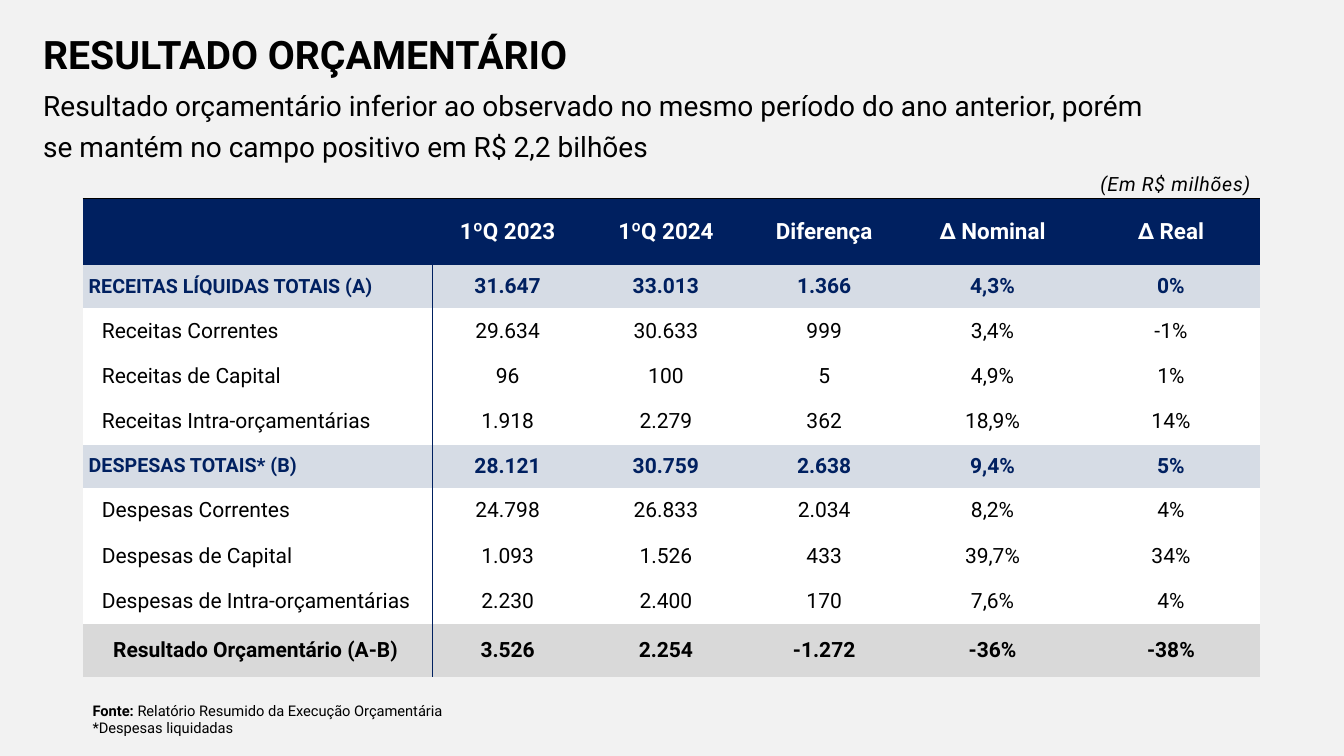
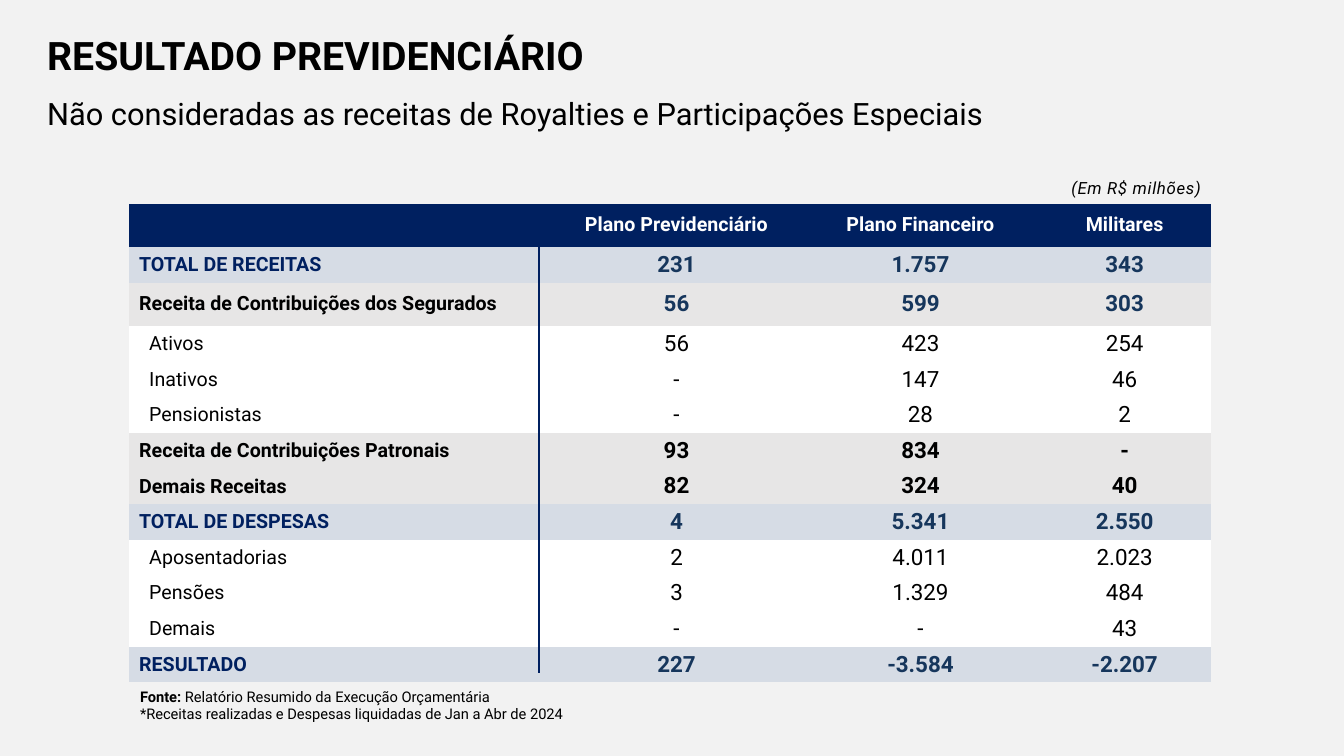
from dataclasses import dataclass, replace

from pptx import Presentation
from pptx.dml.color import RGBColor
from pptx.enum.shapes import MSO_CONNECTOR
from pptx.enum.text import MSO_ANCHOR, PP_ALIGN
from pptx.oxml import parse_xml
from pptx.oxml.ns import nsdecls, qn
from pptx.util import Inches, Pt


@dataclass(frozen=True)
class Theme:
    font: str = "Roboto"
    background: str = "F2F2F2"
    ink: str = "000000"
    navy: str = "002060"
    steel: str = "16365C"
    white: str = "FFFFFF"
    pale_blue: str = "D6DCE5"
    pale_gray: str = "E7E6E6"
    gray: str = "D9D9D9"
    title: float = 28
    source: float = 10.5
    plain_style: str = "{2D5ABB26-0587-4C30-8999-92F81FD0307C}"


@dataclass(frozen=True)
class Box:
    left: float
    top: float
    width: float
    height: float

    def inches(self):
        return [Inches(n) for n in (self.left, self.top, self.width, self.height)]


@dataclass(frozen=True)
class RowStyle:
    fill: str
    label_size: float
    value_size: float
    height: float
    label_color: str
    value_color: str
    bold: bool = True
    indent: float = 0.1
    label_align: PP_ALIGN = PP_ALIGN.LEFT


THEME = Theme()


def add_run(paragraph, text, size, color=THEME.ink, bold=False, italic=False, spacing=0):
    run = paragraph.add_run()
    run.text = text
    run.font.name = THEME.font
    run.font.size = Pt(size)
    run.font.bold = bold
    run.font.italic = italic
    run.font.color.rgb = RGBColor.from_string(color)
    if spacing:
        run.font._element.set("spc", str(int(spacing * 100)))


def add_text_frame(slide, box, anchor=MSO_ANCHOR.TOP):
    frame = slide.shapes.add_textbox(*box.inches()).text_frame
    frame.word_wrap = True
    frame.vertical_anchor = anchor
    return frame


def add_title(slide, box, title):
    paragraph = add_text_frame(slide, box, MSO_ANCHOR.MIDDLE).paragraphs[0]
    paragraph.line_spacing = 0.9
    add_run(paragraph, title, THEME.title, bold=True)


def add_subtitle(slide, box, subtitle, size, right_inset=0.1):
    frame = add_text_frame(slide, box, MSO_ANCHOR.MIDDLE)
    frame.margin_right = Inches(right_inset)
    paragraph = frame.paragraphs[0]
    paragraph.line_spacing = 1.2
    add_run(paragraph, subtitle, size)


def add_unit(slide, box, size):
    paragraph = add_text_frame(slide, box).paragraphs[0]
    paragraph.alignment = PP_ALIGN.RIGHT
    paragraph.line_spacing = 1.2
    add_run(paragraph, "(Em R$ milhões)", size, italic=True, spacing=0.5)


def add_source(slide, box, remark):
    frame = add_text_frame(slide, box)
    source = frame.paragraphs[0]
    add_run(source, "Fonte: ", THEME.source, bold=True)
    add_run(source, "Relatório Resumido da Execução Orçamentária", THEME.source)
    add_run(frame.add_paragraph(), remark, THEME.source)


def add_divider(slide, x, top, bottom, width):
    divider = slide.shapes.add_connector(
        MSO_CONNECTOR.STRAIGHT, Inches(x), Inches(top), Inches(x), Inches(bottom)
    )
    divider.line.color.rgb = RGBColor.from_string(THEME.navy)
    divider.line.width = Pt(width)
    divider._element.spPr.append(parse_xml(f"<a:effectLst {nsdecls('a')}/>"))


def add_top_border(cell, color, width):
    border = parse_xml(
        f'<a:lnT {nsdecls("a")} w="{Pt(width)}"><a:solidFill>'
        f'<a:srgbClr val="{color}"/></a:solidFill></a:lnT>'
    )
    cell._tc.get_or_add_tcPr().insert(0, border)


def fill_cell(cell, text, style, is_label):
    cell.fill.solid()
    cell.fill.fore_color.rgb = RGBColor.from_string(style.fill)
    cell.vertical_anchor = MSO_ANCHOR.MIDDLE
    cell.margin_left = Inches(style.indent if is_label else 0)
    cell.margin_right = cell.margin_top = cell.margin_bottom = 0
    if text:
        paragraph = cell.text_frame.paragraphs[0]
        paragraph.alignment = style.label_align if is_label else PP_ALIGN.CENTER
        size = style.label_size if is_label else style.value_size
        color = style.label_color if is_label else style.value_color
        add_run(paragraph, text, size, color, style.bold)


def add_results(slide, box, columns, rows, styles, header_border=0):
    table = slide.shapes.add_table(len(rows), len(columns), *box.inches()).table
    table._tbl.tblPr.find(qn("a:tableStyleId")).text = THEME.plain_style
    table.horz_banding = False
    for column, width in zip(table.columns, columns):
        column.width = Inches(width)
    for row, (kind, *texts) in zip(table.rows, rows):
        style = styles[kind]
        row.height = Inches(style.height)
        for index, (cell, text) in enumerate(zip(row.cells, texts)):
            fill_cell(cell, text, style, index == 0)
            if kind == "header" and header_border:
                add_top_border(cell, THEME.ink, header_border)


def add_slide(deck):
    slide = deck.slides.add_slide(deck.slide_layouts[6])
    slide.background.fill.solid()
    slide.background.fill.fore_color.rgb = RGBColor.from_string(THEME.background)
    return slide


def build_budget(deck):
    slide = add_slide(deck)
    table = Box(0.82, 1.97, 11.68, 4.75)
    header = RowStyle(THEME.navy, 16, 16, 0.66, THEME.white, THEME.white)
    detail = RowStyle(THEME.white, 15, 15, 0.45, THEME.ink, THEME.ink, False, 0.19)
    styles = {
        "header": header,
        "total": RowStyle(THEME.pale_blue, 14, 15, 0.43, THEME.navy, THEME.navy, indent=0.06),
        "detail": detail,
        "result": replace(detail, fill=THEME.gray, height=0.53, bold=True,
                          indent=0, label_align=PP_ALIGN.CENTER),
    }
    rows = [
        ("header", "", "1ºQ 2023", "1ºQ 2024", "Diferença", "∆ Nominal", "∆ Real"),
        ("total", "RECEITAS LÍQUIDAS TOTAIS (A)", "31.647", "33.013", "1.366", "4,3%", "0%"),
        ("detail", "Receitas Correntes", "29.634", "30.633", "999", "3,4%", "-1%"),
        ("detail", "Receitas de Capital", "96", "100", "5", "4,9%", "1%"),
        ("detail", "Receitas Intra-orçamentárias", "1.918", "2.279", "362", "18,9%", "14%"),
        ("total", "DESPESAS TOTAIS* (B)", "28.121", "30.759", "2.638", "9,4%", "5%"),
        ("detail", "Despesas Correntes", "24.798", "26.833", "2.034", "8,2%", "4%"),
        ("detail", "Despesas de Capital", "1.093", "1.526", "433", "39,7%", "34%"),
        ("detail", "Despesas de Intra-orçamentárias", "2.230", "2.400", "170", "7,6%", "4%"),
        ("result", "Resultado Orçamentário (A-B)", "3.526", "2.254", "-1.272", "-36%", "-38%"),
    ]
    add_title(slide, Box(0.33, 0.17, 10.55, 0.79), "RESULTADO ORÇAMENTÁRIO")
    add_subtitle(
        slide, Box(0.33, 0.82, 11.68, 0.79),
        "Resultado orçamentário inferior ao observado no mesmo período do ano anterior, "
        "porém se mantém no campo positivo em R$ 2,2 bilhões",
        20, right_inset=0.5,
    )
    add_unit(slide, Box(table.left + table.width - 2.09, 1.61, 2.09, 0.42), 14)
    add_source(slide, Box(table.left, 6.91, 4.74, 0.45), "*Despesas liquidadas")
    add_results(slide, table, [3.43] + [1.57] * 3 + [1.77] * 2, rows, styles, 0.5)
    add_divider(slide, 4.29, 2.41, table.top + table.height, 0.75)


def build_pension(deck):
    slide = add_slide(deck)
    table = Box(1.28, 2.02, 10.73, 4.75)
    tall = 0.43
    short = (table.height - 2 * tall) / 11
    total = RowStyle(THEME.pale_blue, 14, 16, short, THEME.navy, THEME.steel)
    group = replace(total, fill=THEME.pale_gray, label_color=THEME.ink, value_color=THEME.ink)
    styles = {
        "header": RowStyle(THEME.navy, 14, 14, tall, THEME.white, THEME.white),
        "total": total,
        "main group": replace(group, height=tall, value_color=THEME.steel),
        "group": group,
        "detail": replace(group, fill=THEME.white, bold=False, indent=0.2),
    }
    rows = [
        ("header", "", "Plano Previdenciário", "Plano Financeiro", "Militares"),
        ("total", "TOTAL DE RECEITAS", "231", "1.757", "343"),
        ("main group", "Receita de Contribuições dos Segurados", "56", "599", "303"),
        ("detail", "Ativos", "56", "423", "254"),
        ("detail", "Inativos", "-", "147", "46"),
        ("detail", "Pensionistas", "-", "28", "2"),
        ("group", "Receita de Contribuições Patronais", "93", "834", "-"),
        ("group", "Demais Receitas", "82", "324", "40"),
        ("total", "TOTAL DE DESPESAS", "4", "5.341", "2.550"),
        ("detail", "Aposentadorias", "2", "4.011", "2.023"),
        ("detail", "Pensões", "3", "1.329", "484"),
        ("detail", "Demais", "-", "-", "43"),
        ("total", "RESULTADO", "227", "-3.584", "-2.207"),
    ]
    add_title(slide, Box(0.37, 0.18, 7.85, 0.79), "RESULTADO PREVIDENCIÁRIO")
    add_subtitle(
        slide, Box(0.37, 0.79, 12.6, 0.59),
        "Não consideradas as receitas de Royalties e Participações Especiais", 22,
    )
    add_unit(slide, Box(table.left + table.width - 2.09, 1.67, 2.09, 0.42), 12)
    add_source(
        slide, Box(1.29, table.top + table.height, 8.02, 0.45),
        "*Receitas realizadas e Despesas liquidadas de Jan a Abr de 2024",
    )
    add_results(slide, table, [4.18, 2.5, 2.34, 1.71], rows, styles)
    add_divider(slide, 5.35, 2.28, 6.68, 1.5)


def main():
    deck = Presentation()
    deck.slide_width = Inches(13.33)
    deck.slide_height = Inches(7.5)
    build_budget(deck)
    build_pension(deck)
    deck.save("out.pptx")


if __name__ == "__main__":
    main()
